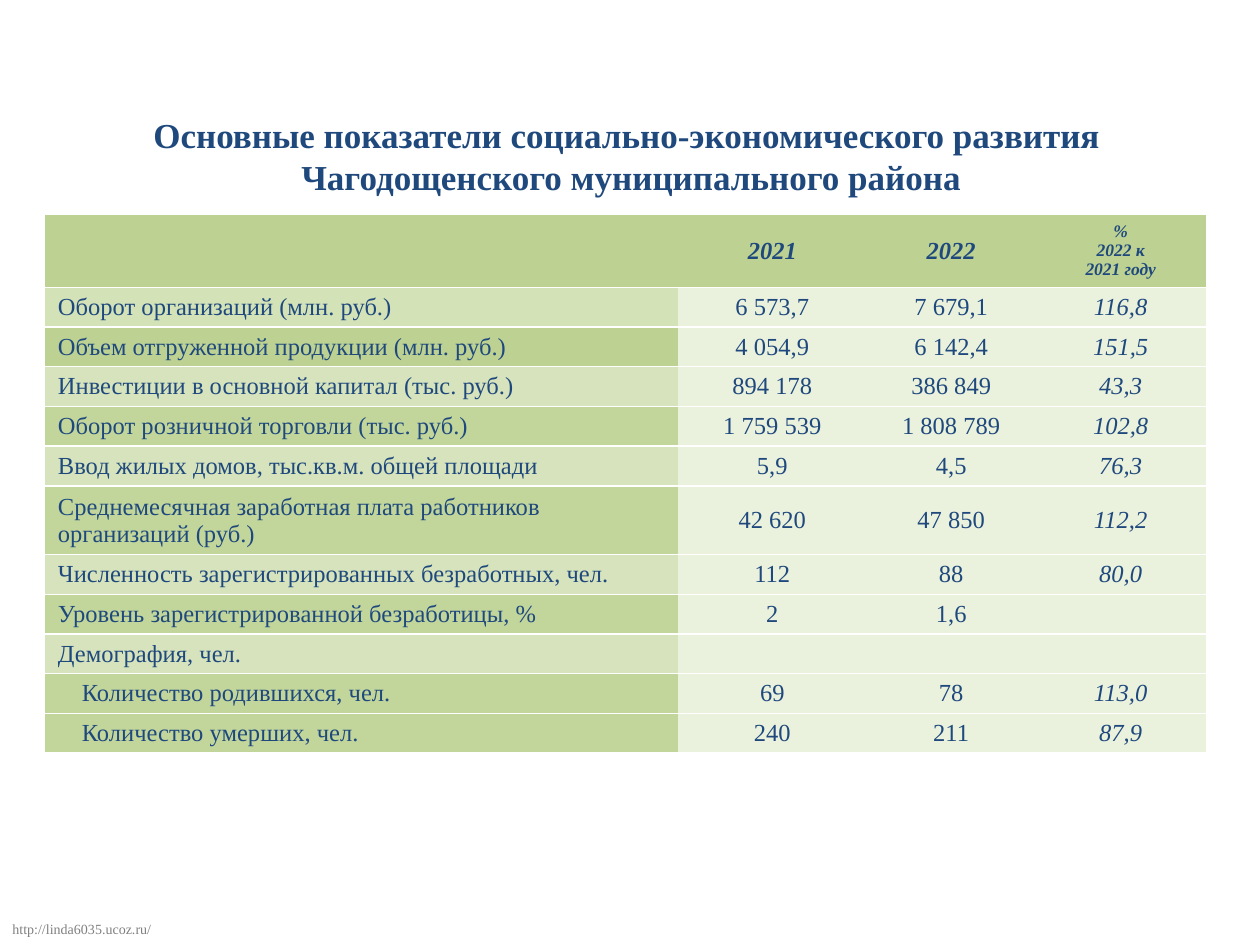
from lxml import etree
from pptx import Presentation
from pptx.dml.color import RGBColor
from pptx.enum.text import MSO_ANCHOR, PP_ALIGN
from pptx.oxml.ns import qn
from pptx.util import Inches, Pt

LEFT, CENTER = PP_ALIGN.LEFT, PP_ALIGN.CENTER
MIDDLE, TOP = MSO_ANCHOR.MIDDLE, MSO_ANCHOR.TOP
FONT = "Times New Roman"
NAVY, GRAY, WHITE = "1F497D", "808080", "FFFFFF"
HEAD, PALE = "BDD292", "EAF1DD"
LIGHT, GREEN = "D6E3BC", "C2D69B"

TITLE = ("Основные показатели социально-экономического развития \v"
         "Чагодощенского муниципального района")
SITE = "http://linda6035.ucoz.ru/"
HEADER = ["", "2021", "2022", "%\n2022 к\n2021 году"]
# Fill of the first cell, then the four texts
ROWS = [
    ("D4E2B8", "Оборот организаций (млн. руб.)", "6 573,7", "7 679,1", "116,8"),
    (HEAD, "Объем отгруженной продукции (млн. руб.)", "4 054,9", "6 142,4", "151,5"),
    (LIGHT, "Инвестиции в основной капитал (тыс. руб.)", "894 178", "386 849", "43,3"),
    (GREEN, "Оборот розничной торговли (тыс. руб.)", "1 759 539", "1 808 789", "102,8"),
    (LIGHT, "Ввод жилых домов, тыс.кв.м. общей площади", "5,9", "4,5", "76,3"),
    (GREEN, "Среднемесячная заработная плата работников организаций (руб.)",
     "42 620", "47 850", "112,2"),
    (LIGHT, "Численность зарегистрированных безработных, чел.", "112", "88", "80,0"),
    (GREEN, "Уровень зарегистрированной безработицы, %", "2", "1,6", ""),
    (LIGHT, "Демография, чел.", "", "", ""),
    (GREEN, "Количество родившихся, чел.", "69", "78", "113,0"),
    (GREEN, "Количество умерших, чел.", "240", "211", "87,9"),
]
WAGE = 6
BIRTHS = 10
WIDTHS = [5.02, 1.5, 1.34, 1.35]
HEAD_H, ROW_H, WAGE_H = 0.57, 0.315, 0.53


def color(code):
    return RGBColor.from_string(code)


def write(frame, text, size, code, align=LEFT, bold=False, italic=False):
    frame.text = text
    for para in frame.paragraphs:
        para.alignment = align
        font = para.font
        font.name, font.size = FONT, Pt(size)
        font.bold, font.italic = bold, italic
        font.color.rgb = color(code)
        if not text:
            # An empty cell takes its line height from the end mark
            etree.SubElement(para._p, qn("a:endParaRPr"), sz=str(size * 100))


def add_text(slide, box, text, size, code, anchor, wrap, **style):
    frame = slide.shapes.add_textbox(*map(Inches, box)).text_frame
    frame.word_wrap = wrap
    frame.vertical_anchor = anchor
    write(frame, text, size, code, **style)


def rule(cell):
    """White lines above and below the cell, none at its sides."""
    props = cell._tc.get_or_add_tcPr()
    for spot, side in enumerate("LRTB"):
        line = etree.Element(qn("a:ln" + side), w=str(Pt(1)))
        if side in "LR":
            etree.SubElement(line, qn("a:noFill"))
        else:
            fill = etree.SubElement(line, qn("a:solidFill"))
            etree.SubElement(fill, qn("a:srgbClr"), val=WHITE)
        props.insert(spot, line)


def add_cell(cell, text, fill, row, col):
    head = row == 0
    last = col == len(WIDTHS) - 1
    cell.vertical_anchor = MIDDLE
    cell.margin_top = cell.margin_bottom = Inches(0.04)
    if col == 0 and row >= BIRTHS:
        cell.margin_left = Inches(0.29)
    cell.fill.solid()
    cell.fill.fore_color.rgb = color(fill)
    rule(cell)
    write(cell.text_frame, text, 10 if head and last else 14, NAVY,
          align=CENTER if col else LEFT, bold=head, italic=head or last)


def add_grid(slide):
    heights = [HEAD_H] + [ROW_H] * len(ROWS)
    heights[WAGE] = WAGE_H
    table = slide.shapes.add_table(
        len(heights), len(WIDTHS), Inches(0.36), Inches(1.7),
        Inches(sum(WIDTHS)), Inches(sum(heights))).table
    table.horz_banding = False
    for column, width in zip(table.columns, WIDTHS):
        column.width = Inches(width)
    for row, height in zip(table.rows, heights):
        row.height = Inches(height)
    for col, text in enumerate(HEADER):
        add_cell(table.cell(0, col), text, HEAD, 0, col)
    for row, (fill, *texts) in enumerate(ROWS, 1):
        for col, text in enumerate(texts):
            add_cell(table.cell(row, col), text, PALE if col else fill, row, col)


def main():
    deck = Presentation()
    deck.slide_width, deck.slide_height = Inches(10), Inches(7.5)
    slide = deck.slides.add_slide(deck.slide_layouts[6])
    add_text(slide, (0, 7.26, 1.31, 0.24), SITE, 8, GRAY, TOP, False)
    add_text(slide, (0.51, 0.84, 9, 0.79), TITLE, 20, NAVY, MIDDLE, True,
             align=CENTER, bold=True)
    add_grid(slide)
    deck.save("out.pptx")


if __name__ == "__main__":
    main()
